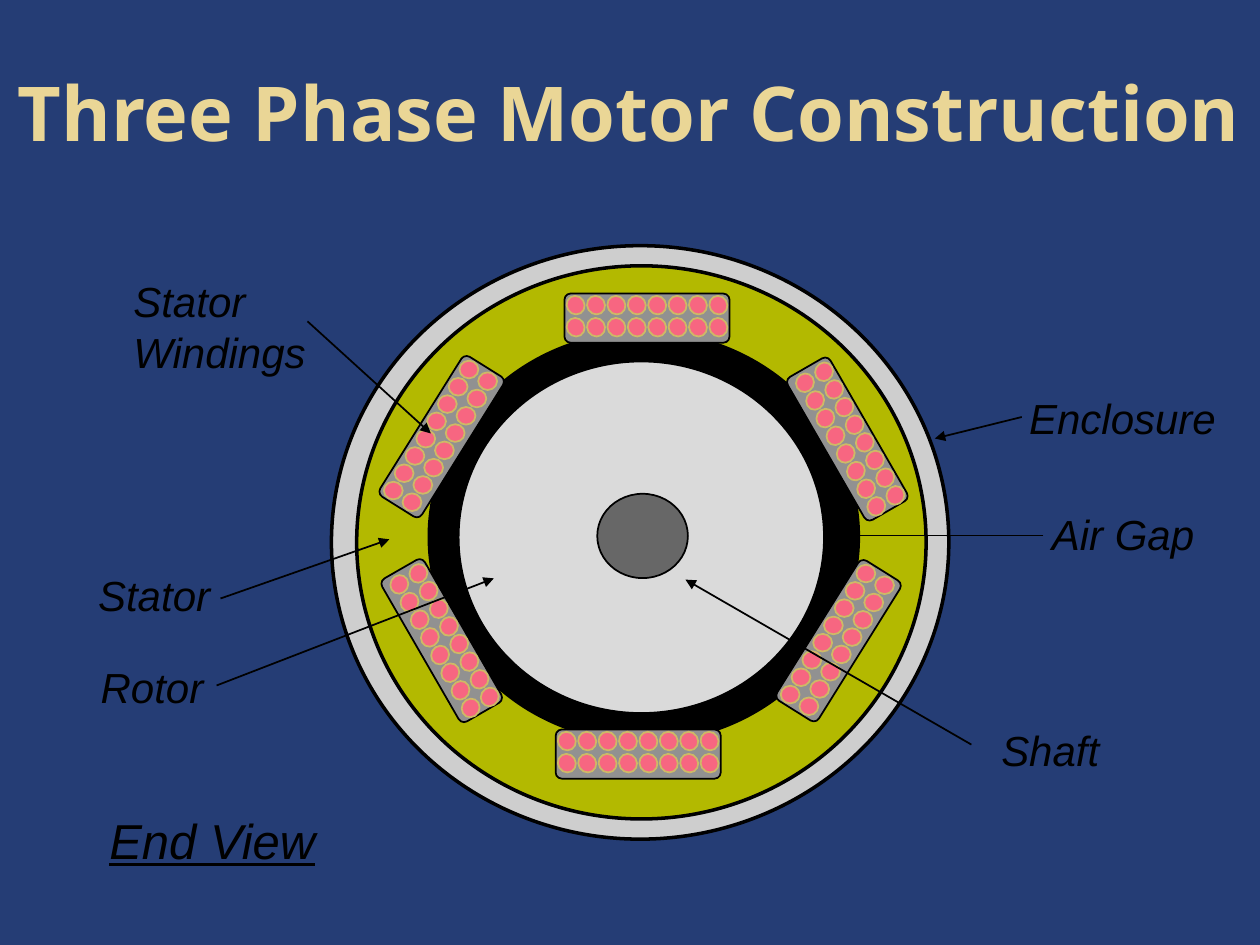
from math import cos, radians, sin
from typing import NamedTuple

from lxml.etree import SubElement
from pptx import Presentation
from pptx.dml.color import RGBColor
from pptx.enum.shapes import MSO_CONNECTOR, MSO_SHAPE
from pptx.enum.text import MSO_ANCHOR, MSO_AUTO_SIZE, PP_ALIGN
from pptx.oxml.ns import qn
from pptx.util import Pt

NAVY = RGBColor(0x25, 0x3D, 0x75)
GOLD = RGBColor(0xEA, 0xD6, 0x96)
BLACK = RGBColor(0x00, 0x00, 0x00)
ENCLOSURE_GREY = RGBColor(0xCE, 0xCE, 0xCE)
STATOR_OLIVE = RGBColor(0xB3, 0xB9, 0x00)
ROTOR_GREY = RGBColor(0xDA, 0xDA, 0xDA)
SHAFT_GREY = RGBColor(0x67, 0x67, 0x67)
SLOT_GREY = RGBColor(0x91, 0x91, 0x91)
WIRE_PINK = RGBColor(0xF7, 0x66, 0x81)
WIRE_RIM = RGBColor(0xCE, 0xB9, 0x66)


class Ring(NamedTuple):
    left: float
    top: float
    width: float
    height: float
    fill: RGBColor
    line_width: float = 1


class Slot(NamedTuple):
    x: float  # centre
    y: float
    angle: float


class Label(NamedTuple):
    text: str
    left: float
    top: float
    width: float
    height: float = 36
    size: float = 24
    align: PP_ALIGN = PP_ALIGN.LEFT
    underline: bool = False


class Arrow(NamedTuple):
    x1: float
    y1: float
    x2: float
    y2: float


# From the enclosure inwards to the shaft
RINGS = [
    Ring(189.4, 140.4, 352.8, 339.1, ENCLOSURE_GREY, 2),
    Ring(203.8, 151.9, 325.4, 316.1, STATOR_OLIVE, 2),
    Ring(244.8, 189.4, 246.2, 234.7, BLACK),
    Ring(262.1, 206.6, 208.8, 200.9, ROTOR_GREY),
    Ring(341.3, 282.2, 51.8, 48.2, SHAFT_GREY),
]

SLOTS = [
    Slot(252.4, 249.5, 302),
    Slot(484.2, 250.9, 60),
    Slot(369.7, 181.8, 0),
    Slot(364.7, 430.9, 0),
    Slot(479.2, 366.1, 302),
    Slot(252.4, 366.1, 60),
]
SLOT_WIDTH, SLOT_HEIGHT = 94.3, 28.1
WIRE_WIDTH, WIRE_HEIGHT = 10.8, 10.1
WIRES_PER_ROW, WIRE_ROWS = 8, 2
WIRE_PITCH, ROW_PITCH = 11.65, 12.6
WIRE_TURN = 58
# Shift of the wires within a slot, by slot angle
WIRE_SHIFT = {302: (-0.7, -0.4), 60: (1.6, 0), 0: (0, -1.1)}

LABELS = [
    Label("End View", 55.4, 459.4, 188.6, 40.3, size=28, underline=True),
    Label("Rotor", 50.4, 374.4, 94.3),
    Label("Stator", 49, 321.8, 96.5),
    Label("Enclosure", 581, 221, 122.4),
    Label("Air Gap", 594, 287.3, 96.5),
    Label("Stator Windings", 69.1, 154.1, 114.5, 64.8),
    Label("Shaft", 553, 410.4, 94.3, align=PP_ALIGN.CENTER),
]

ARROWS = [
    Arrow(126, 342, 222.5, 308.2),
    Arrow(123.8, 391.7, 282.2, 330.5),
    Arrow(583.9, 238.3, 534.2, 250.6),
    Arrow(596.2, 306, 480.2, 306),
    Arrow(175.7, 183.6, 246.2, 247.7),
    Arrow(555.1, 425.5, 391.7, 331.2),
]


def add_part(shapes, kind: MSO_SHAPE, left: float, top: float, width: float,
             height: float, fill: RGBColor, line: RGBColor = BLACK,
             line_width: float = 1, angle: float = 0):
    part = shapes.add_shape(kind, Pt(left), Pt(top), Pt(width), Pt(height))
    part.shadow.inherit = False
    part.fill.solid()
    part.fill.fore_color.rgb = fill
    part.line.color.rgb = line
    part.line.width = Pt(line_width)
    part.rotation = angle
    return part


def add_slot(shapes, slot: Slot) -> None:
    box = add_part(shapes, MSO_SHAPE.ROUNDED_RECTANGLE, slot.x - SLOT_WIDTH / 2,
                   slot.y - SLOT_HEIGHT / 2, SLOT_WIDTH, SLOT_HEIGHT,
                   SLOT_GREY, angle=slot.angle)
    box.adjustments[0] = 0.125
    cosine, sine = cos(radians(slot.angle)), sin(radians(slot.angle))
    shift_x, shift_y = WIRE_SHIFT[slot.angle]
    wire_angle = (slot.angle + WIRE_TURN) % 360
    for row in range(WIRE_ROWS):
        across = (row - (WIRE_ROWS - 1) / 2) * ROW_PITCH
        for column in range(WIRES_PER_ROW):
            along = (column - (WIRES_PER_ROW - 1) / 2) * WIRE_PITCH
            x = slot.x + shift_x + along * cosine - across * sine
            y = slot.y + shift_y + along * sine + across * cosine
            add_part(shapes, MSO_SHAPE.OVAL, x - WIRE_WIDTH / 2,
                     y - WIRE_HEIGHT / 2, WIRE_WIDTH, WIRE_HEIGHT,
                     WIRE_PINK, WIRE_RIM, angle=wire_angle)


def add_label(shapes, label: Label) -> None:
    box = shapes.add_textbox(Pt(label.left), Pt(label.top),
                             Pt(label.width), Pt(label.height))
    frame = box.text_frame
    frame.word_wrap = True
    frame.auto_size = MSO_AUTO_SIZE.SHAPE_TO_FIT_TEXT
    paragraph = frame.paragraphs[0]
    paragraph.alignment = label.align
    run = paragraph.add_run()
    run.text = label.text
    font = run.font
    font.name, font.size, font.italic = "Arial", Pt(label.size), True
    font.color.rgb = BLACK
    if label.underline:
        font.underline = True


def add_arrow(shapes, arrow: Arrow) -> None:
    pointer = shapes.add_connector(MSO_CONNECTOR.STRAIGHT, *map(Pt, arrow))
    pointer.line.color.rgb = BLACK
    pointer.line.width = Pt(1)
    SubElement(pointer.line._get_or_add_ln(), qn("a:tailEnd"), type="triangle")
    SubElement(pointer._element.spPr, qn("a:effectLst"))


def add_title(slide, text: str) -> None:
    title = slide.shapes.title
    title.left, title.top, title.width, title.height = map(Pt, (1.4, 18, 715.7, 91.4))
    frame = title.text_frame
    frame.margin_left = frame.margin_right = 0
    frame.auto_size = MSO_AUTO_SIZE.NONE
    frame.vertical_anchor = MSO_ANCHOR.MIDDLE
    paragraph = frame.paragraphs[0]
    paragraph.alignment = PP_ALIGN.CENTER
    run = paragraph.add_run()
    run.text = text
    run.font.name, run.font.size, run.font.bold = "Noto Sans", Pt(43.2), True
    run.font.color.rgb = GOLD


def main() -> None:
    deck = Presentation()
    deck.slide_width, deck.slide_height = Pt(720), Pt(540)
    slide = deck.slides.add_slide(deck.slide_layouts[5])
    slide.background.fill.solid()
    slide.background.fill.fore_color.rgb = NAVY
    add_title(slide, "Three Phase Motor Construction")

    # Motor end view
    motor = slide.shapes.add_group_shape().shapes
    for ring in RINGS:
        add_part(motor, MSO_SHAPE.OVAL, ring.left, ring.top, ring.width,
                 ring.height, ring.fill, line_width=ring.line_width)
    for slot in SLOTS:
        add_slot(motor, slot)

    # Names and pointers
    for label in LABELS:
        add_label(slide.shapes, label)
    for arrow in ARROWS:
        add_arrow(slide.shapes, arrow)
    deck.save("out.pptx")


if __name__ == "__main__":
    main()
